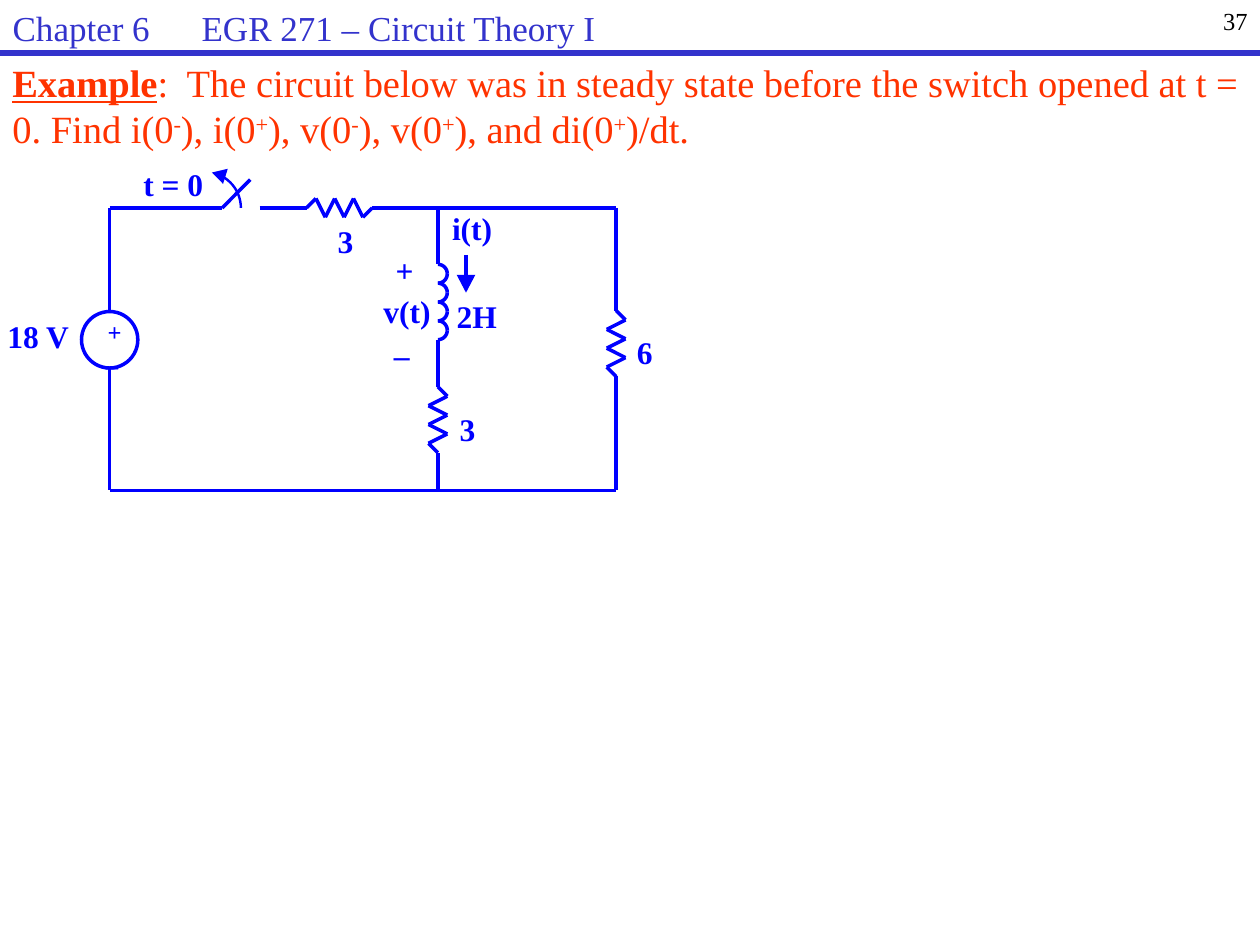
import itertools
import math

from lxml import etree
from pptx import Presentation
from pptx import util as u
from pptx.dml import color
from pptx.enum import shapes, text
from pptx.oxml import ns

FONT = "Times New Roman"
BLUE, NAVY, RED, BLACK, WHITE = "0000FF", "3333CC", "FF3300", "000000", "FFFFFF"
COLS, ROWS = 54, 30

WIRES = [
    ((0, 11), (0, 0)), ((0, 0), (12, 0)), ((12, 0), (15, -3)), ((16, 0), (21, 0)),
    ((28, 0), (54, 0)), ((54, 0), (54, 11)), ((54, 17.9), (54, 30)), ((0, 30), (54, 30)),
    ((0, 17), (0, 30)), ((35, 0), (35, 6)), ((35, 14), (35, 19)), ((35, 26), (35, 30)),
    ((38, 5), (38, 7.4)),
]
RESISTORS = [((21, 0), False), ((35, 19), True), ((54, 10.9), True)]
ARROWHEADS = [
    [(12.6, -4.15), (10.9, -3.75), (12.1, -2.55)],
    [(37, 7.1), (38, 9), (39, 7.1)],
]
LABELS = [
    ("+", -0.2, 11.6, 2.7, 14), ("_", -0.4, 14.2, 2.6, 14),
    ("18 V", -10.9, 11.6, 6.6, 18), ("t = 0", 3.6, -4.6, 6.4, 18),
    ("3", 24.3, 1.5, 1.7, 18), ("3", 37.3, 21.5, 1.7, 18),
    ("2H", 37, 9.5, 4.3, 18), ("v(t)", 29.2, 8.9, 5.1, 18),
    ("+", 30.5, 4.6, 1.9, 18), ("_", 30.3, 12.4, 1.7, 18),
    ("i(t)", 36.5, 0.1, 4.3, 18), ("6", 56.2, 13.3, 1.7, 18),
]
QUESTION = [
    (":  The circuit below was in steady state before the switch opened at t = 0. Find i(0", "-"),
    ("), i(0", "+"), ("), v(0", "-"), ("), v(0", "+"), ("), and di(0", "+"), (")/dt.", ""),
]


def rgb(value):
    """Return the colour for a hex string."""
    return color.RGBColor.from_string(value)


def add_run(paragraph, words, size, tint, bold=False):
    """Add one formatted run and return it."""
    run = paragraph.add_run()
    run.text = words
    run.font.name, run.font.size, run.font.bold = FONT, u.Pt(size), bold
    run.font.color.rgb = rgb(tint)
    return run


def add_line(slide, start, end, tint, weight):
    """Draw a straight line without a shadow."""
    line = slide.shapes.add_connector(shapes.MSO_CONNECTOR.STRAIGHT, *start, *end)
    line.line.color.rgb = rgb(tint)
    line.line.width = u.Pt(weight)
    etree.SubElement(line._element.spPr, ns.qn("a:effectLst"))


def paint(shape, fill=None, weight=None):
    """Give a circuit part its fill and its blue outline."""
    shape.shadow.inherit = False
    if fill:
        shape.fill.solid()
        shape.fill.fore_color.rgb = rgb(fill)
    else:
        shape.fill.background()
    if weight:
        shape.line.color.rgb = rgb(BLUE)
        shape.line.width = u.Pt(weight)
    else:
        shape.line.fill.background()


class Grid:
    """Map columns and rows of a box to lengths on the slide."""

    def __init__(self, left, top, width, height):
        """Keep the corner of the box and the size of one cell."""
        self.left, self.top = left, top
        self.col, self.row = width / COLS, height / ROWS

    def at(self, col, row):
        """Return the point at a column and a row."""
        return int(self.left + col * self.col), int(self.top + row * self.row)

    def box(self, col, row, cols, rows):
        """Return left, top, width and height of a block of cells."""
        return (*self.at(col, row), int(cols * self.col), int(rows * self.row))


def add_outline(slide, grid, points, close):
    """Build a polyline or polygon through grid points."""
    corners = [grid.at(*point) for point in points]
    builder = slide.shapes.build_freeform(*corners[0])
    builder.add_line_segments(corners[1:], close=close)
    return builder.convert_to_shape()


def add_resistor(slide, grid, start, vertical):
    """Draw a zigzag seven cells long and two cells wide."""
    col, row = start
    swings = [0, 1, -1, 1, -1, 1, -1, 0]
    points = [(col + s, row + i) if vertical else (col + i, row - s)
              for i, s in enumerate(swings)]
    for here, there in itertools.pairwise(points):
        add_line(slide, grid.at(*here), grid.at(*there), BLUE, 2)


def add_arc(slide, grid, centre, radius, first, last, weight):
    """Draw an arc between two clockwise angles in degrees."""
    col, row = centre
    turns = [math.radians(first + (last - first) * i / 12) for i in range(13)]
    points = [(col + radius * math.cos(t), row + radius * math.sin(t)) for t in turns]
    paint(add_outline(slide, grid, points, False), weight=weight)


def add_label(slide, grid, words, col, row, cols, size):
    """Write a bold blue label at a grid position."""
    frame = slide.shapes.add_textbox(*grid.box(col, row, cols, size / 4.5)).text_frame
    frame.margin_left = frame.margin_right = frame.margin_top = frame.margin_bottom = 0
    frame.word_wrap = False
    add_run(frame.paragraphs[0], words, size, BLUE, True)


def draw_circuit(slide, left, top, width, height):
    """Draw the switched circuit with its labels in a box."""
    grid = Grid(left, top, width, height)
    source = slide.shapes.add_shape(shapes.MSO_SHAPE.OVAL, *grid.box(-3, 11, 6, 6))
    paint(source, WHITE, 2)
    for start, end in WIRES:
        add_line(slide, grid.at(*start), grid.at(*end), BLUE, 2)
    for start, vertical in RESISTORS:
        add_resistor(slide, grid, start, vertical)
    for row, first in itertools.product(range(7, 14, 2), (-90, 0)):
        add_arc(slide, grid, (35, row), 1, first, first + 90, 2)
    add_arc(slide, grid, (10.2, 0), 3.8, -61, 0, 1.38)
    for points in ARROWHEADS:
        paint(add_outline(slide, grid, points, True), BLUE)
    for label in LABELS:
        add_label(slide, grid, *label)


def write_header(slide, width, height):
    """Place the course title, page number and rule in the top band."""
    title = slide.shapes.title
    title.left, title.top, title.width, title.height = 0, 0, int(width * 0.73), int(height * 0.8)
    frame = title.text_frame
    frame.auto_size = text.MSO_AUTO_SIZE.NONE
    frame.vertical_anchor = text.MSO_ANCHOR.TOP
    heading = frame.paragraphs[0]
    heading.alignment = text.PP_ALIGN.LEFT
    heading.space_before = u.Pt(2)
    stops = etree.SubElement(heading._p.get_or_add_pPr(), ns.qn("a:tabLst"))
    etree.SubElement(stops, ns.qn("a:tab"), pos=str(u.Inches(1.5)), algn="l")
    add_run(heading, "Chapter 6\tEGR 271 – Circuit Theory I", 20, NAVY)

    number = slide.shapes.add_textbox(int(width * 0.79), 0, int(width * 0.21), height)
    number.text_frame.word_wrap = True
    page = number.text_frame.paragraphs[0]
    page.alignment = text.PP_ALIGN.RIGHT
    add_run(page, "37", 14, BLACK)
    add_line(slide, (0, height), (width, height), NAVY, 3)


def write_question(slide, left, top, width, height):
    """Write the example question with its superscripts."""
    frame = slide.shapes.add_textbox(left, top, width, height).text_frame
    frame.word_wrap = True
    question = frame.paragraphs[0]
    question.space_before = u.Pt(2)
    add_run(question, "Example", 22, RED, True).font.underline = True
    for words, sign in QUESTION:
        add_run(question, words, 22, RED)
        if sign:
            raised = add_run(question, sign, 22, RED)
            raised.font._element.set("baseline", "30000")


def main():
    """Build the slide and save it."""
    deck = Presentation()
    deck.slide_width, deck.slide_height = u.Inches(10), u.Inches(7.5)
    width, height = deck.slide_width, deck.slide_height
    slide = deck.slides.add_slide(deck.slide_layouts[5])
    band = int(height * 0.056)
    write_header(slide, width, band)
    write_question(slide, 0, band, width, int(height * 0.136))
    draw_circuit(slide, width * 0.087, height * 0.22, width * 0.402, height * 0.299)
    deck.save("out.pptx")


if __name__ == "__main__":
    main()
